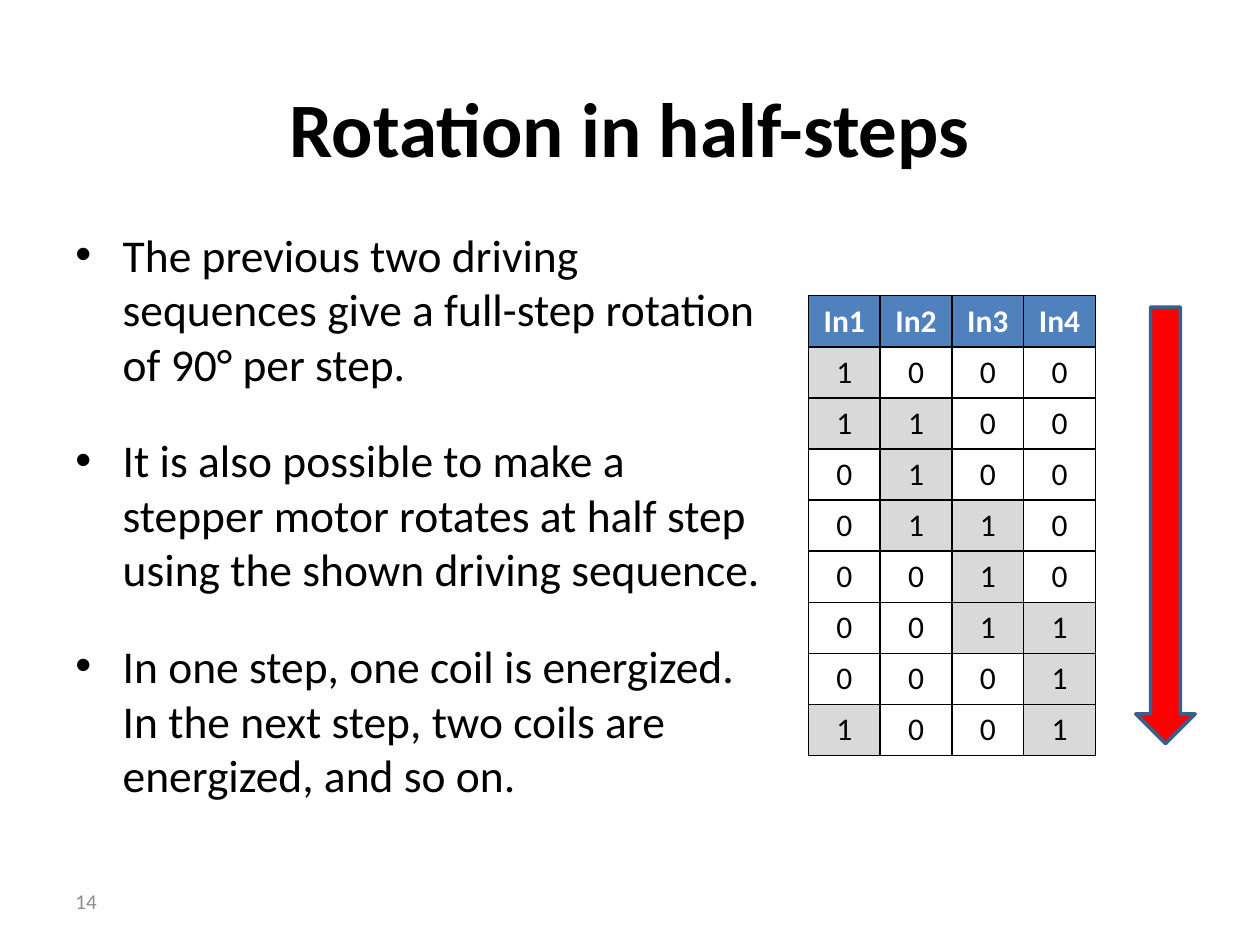
"""Build the slide on half-step rotation of a stepper motor."""
from lxml import etree
from pptx import Presentation
from pptx import util as u
from pptx.dml.color import RGBColor
from pptx.enum import shapes, text
from pptx.oxml import ns

COLORS = {
    "black": "000000", "white": "FFFFFF", "header": "4F81BD", "active": "D9D9D9",
    "arrow": "FF0000", "outline": "3A5F8C", "number": "8C8C8C",
}
BULLETS = [
    "The previous two driving sequences give a full-step rotation of 90° per step.",
    "It is also possible to make a stepper motor rotates at half step using the shown driving sequence.",
    "In one step, one coil is energized. In the next step, two coils are energized, and so on.",
]
SEQUENCE = ["1000", "1100", "0100", "0110", "0010", "0011", "0001", "1001"]


def write(para, words, size=18, color="black", bold=False, align=text.PP_ALIGN.LEFT):
    """Put one formatted span of words into a paragraph."""
    para.alignment = align
    span = para.add_run()
    span.text = words
    span.font.name = "Calibri"
    span.font.size = u.Pt(size)
    span.font.bold = bold
    span.font.color.rgb = RGBColor.from_string(COLORS[color])


def paint(fill, color):
    """Give a fill one solid colour."""
    fill.solid()
    fill.fore_color.rgb = RGBColor.from_string(COLORS[color])


deck = Presentation()
deck.slide_width, deck.slide_height = u.Pt(720), u.Pt(540)
page = deck.slides.add_slide(deck.slide_layouts[5])

title = page.shapes.title
title.left, title.top, title.width, title.height = u.Pt(36), u.Pt(44.5), u.Pt(648), u.Pt(55.5)
paint(title.fill, "white")
title.text_frame.vertical_anchor = text.MSO_ANCHOR.MIDDLE
write(title.text_frame.paragraphs[0], "Rotation in half-steps", size=44, bold=True,
      align=text.PP_ALIGN.CENTER)

body = page.shapes.add_textbox(u.Pt(36), u.Pt(126), u.Pt(409), u.Pt(399)).text_frame
body.word_wrap = True
for index, words in enumerate(BULLETS):
    para = body.add_paragraph() if index else body.paragraphs[0]
    write(para, words, size=26)
    para.space_before = para.space_after = u.Pt(12)
    props = para._p.get_or_add_pPr()
    props.set("marL", str(u.Pt(27)))
    props.set("indent", str(-u.Pt(27)))
    etree.SubElement(props, ns.qn("a:buFont"), typeface="Arial")
    etree.SubElement(props, ns.qn("a:buChar"), char="•")

arrow = page.shapes.add_shape(shapes.MSO_SHAPE.DOWN_ARROW, u.Pt(649), u.Pt(175.5), u.Pt(34), u.Pt(249.5))
arrow.shadow.inherit = False
paint(arrow.fill, "arrow")
paint(arrow.line.fill, "outline")
arrow.line.width = u.Pt(2)

number = page.shapes.add_textbox(u.Pt(36), u.Pt(500.5), u.Pt(168), u.Pt(28.5)).text_frame
number.word_wrap = True
number.vertical_anchor = text.MSO_ANCHOR.MIDDLE
write(number.paragraphs[0], "14", size=12, color="number")

rows = [["In1", "In2", "In3", "In4"], *SEQUENCE]
table = page.shapes.add_table(len(rows), 4, u.Pt(462), u.Pt(169), u.Pt(164), u.Pt(262.8)).table
for column in table.columns:
    column.width = u.Pt(41)
for row, values in zip(table.rows, rows):
    row.height = u.Pt(29.2)
    for cell, value in zip(row.cells, values):
        header = value.startswith("In")
        write(cell.text_frame.paragraphs[0], value, color="white" if header else "black",
              bold=header, align=text.PP_ALIGN.CENTER)
        props = cell._tc.get_or_add_tcPr()
        for side in ("lnL", "lnR", "lnT", "lnB"):
            border = etree.SubElement(props, ns.qn(f"a:{side}"), w=str(u.Pt(1)))
            solid = etree.SubElement(border, ns.qn("a:solidFill"))
            etree.SubElement(solid, ns.qn("a:srgbClr"), val=COLORS["black"])
        paint(cell.fill, "header" if header else "active" if value == "1" else "white")

deck.save("out.pptx")
